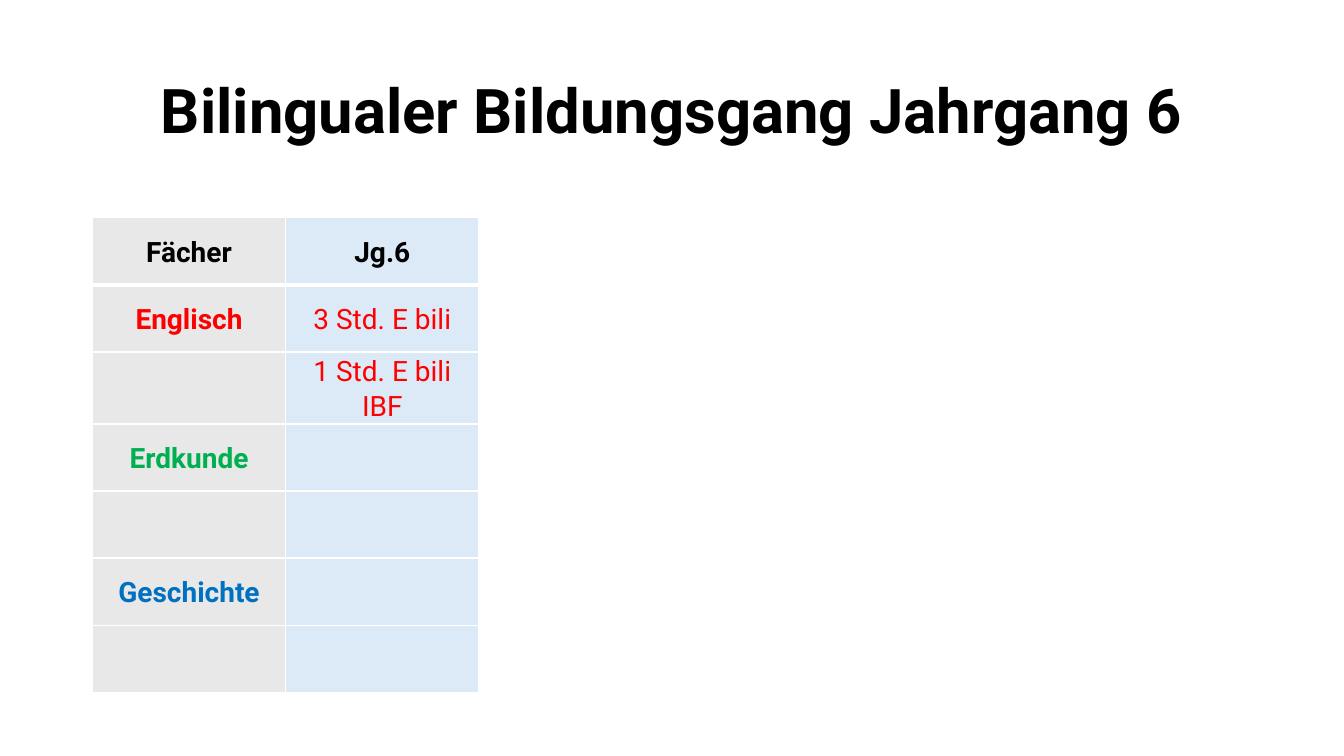
from dataclasses import dataclass

from lxml.etree import SubElement
from pptx import Presentation
from pptx.dml.color import RGBColor
from pptx.enum.text import MSO_ANCHOR as Anchor, PP_ALIGN as Align
from pptx.oxml.ns import qn
from pptx.slide import Slide
from pptx.table import _Cell as Cell
from pptx.text.text import TextFrame
from pptx.util import Cm, Pt

FONT = "Roboto"
COLORS = {
    "black": "000000",
    "white": "FFFFFF",
    "english": "FF0000",
    "geography": "00B050",
    "history": "0070C0",
    "subject_fill": "E8E8E8",
    "year_fill": "DCEAF7",
}
COLUMN_FILLS = ("subject_fill", "year_fill")
COLUMN_WIDTH = Cm(4.87)
ROW_HEIGHT = Cm(1.69)
EMU_PER_POINT = 12700


@dataclass
class SubjectRow:
    subject: str = ""
    lessons: str = ""
    color: str = "black"
    header: bool = False


ROWS = [
    SubjectRow("Fächer", "Jg.6", header=True),
    SubjectRow("Englisch", "3 Std. E bili", "english"),
    SubjectRow("", "1 Std. E bili IBF", "english"),
    SubjectRow("Erdkunde", color="geography"),
    SubjectRow(),
    SubjectRow("Geschichte", color="history"),
    SubjectRow(),
]


def write_text(text_frame: TextFrame, text: str, size: int, color: str,
               bold: bool, line_spacing: float) -> None:
    text_frame.text = text
    paragraph = text_frame.paragraphs[0]
    paragraph.alignment = Align.CENTER
    paragraph.line_spacing = line_spacing
    for run in paragraph.runs:
        run.font.name = FONT
        run.font.size = Pt(size)
        run.font.bold = bold
        run.font.color.rgb = RGBColor.from_string(COLORS[color])


def set_borders(cell: Cell, top: int, bottom: int) -> None:
    """Draw white cell borders; top and bottom widths are in points."""
    properties = cell._tc.get_or_add_tcPr()
    for side, width in {"L": 1, "R": 1, "T": top, "B": bottom}.items():
        line = SubElement(properties, qn(f"a:ln{side}"), w=str(width * EMU_PER_POINT))
        fill = SubElement(line, qn("a:solidFill"))
        SubElement(fill, qn("a:srgbClr"), val=COLORS["white"])


def add_title(slide: Slide, text: str) -> None:
    title = slide.shapes.add_textbox(Cm(2.33), Cm(1.01), Cm(29.21), Cm(3.68))
    title.text_frame.word_wrap = True
    title.text_frame.vertical_anchor = Anchor.MIDDLE
    write_text(title.text_frame, text, 44, "black", True, 0.9)


def add_subject_table(slide: Slide, rows: list[SubjectRow]) -> None:
    column_count = len(COLUMN_FILLS)
    table = slide.shapes.add_table(
        len(rows), column_count, Cm(2.33), Cm(5.49),
        COLUMN_WIDTH * column_count, ROW_HEIGHT * len(rows)).table
    for column in table.columns:
        column.width = COLUMN_WIDTH

    for row_index, row in enumerate(rows):
        table.rows[row_index].height = ROW_HEIGHT
        for column_index, text in enumerate((row.subject, row.lessons)):
            cell = table.cell(row_index, column_index)
            cell.vertical_anchor = Anchor.MIDDLE
            cell.margin_left = cell.margin_right = Cm(0.18)
            cell.margin_top = cell.margin_bottom = 0
            set_borders(cell, top=3 if row_index == 1 else 1,
                        bottom=3 if row.header else 1)
            cell.fill.solid()
            cell.fill.fore_color.rgb = RGBColor.from_string(
                COLORS[COLUMN_FILLS[column_index]])
            if text:
                bold = row.header or column_index == 0
                write_text(cell.text_frame, text, 20, row.color, bold, 1.07)
                paragraph = cell.text_frame.paragraphs[0]
                paragraph.space_before = paragraph.space_after = Pt(6)


def main() -> None:
    presentation = Presentation()
    presentation.slide_width = Cm(33.87)
    presentation.slide_height = Cm(19.05)
    slide = presentation.slides.add_slide(presentation.slide_layouts[6])

    # Heading
    add_title(slide, "Bilingualer Bildungsgang Jahrgang 6")

    # Lessons per subject
    add_subject_table(slide, ROWS)

    presentation.save("out.pptx")


if __name__ == "__main__":
    main()
